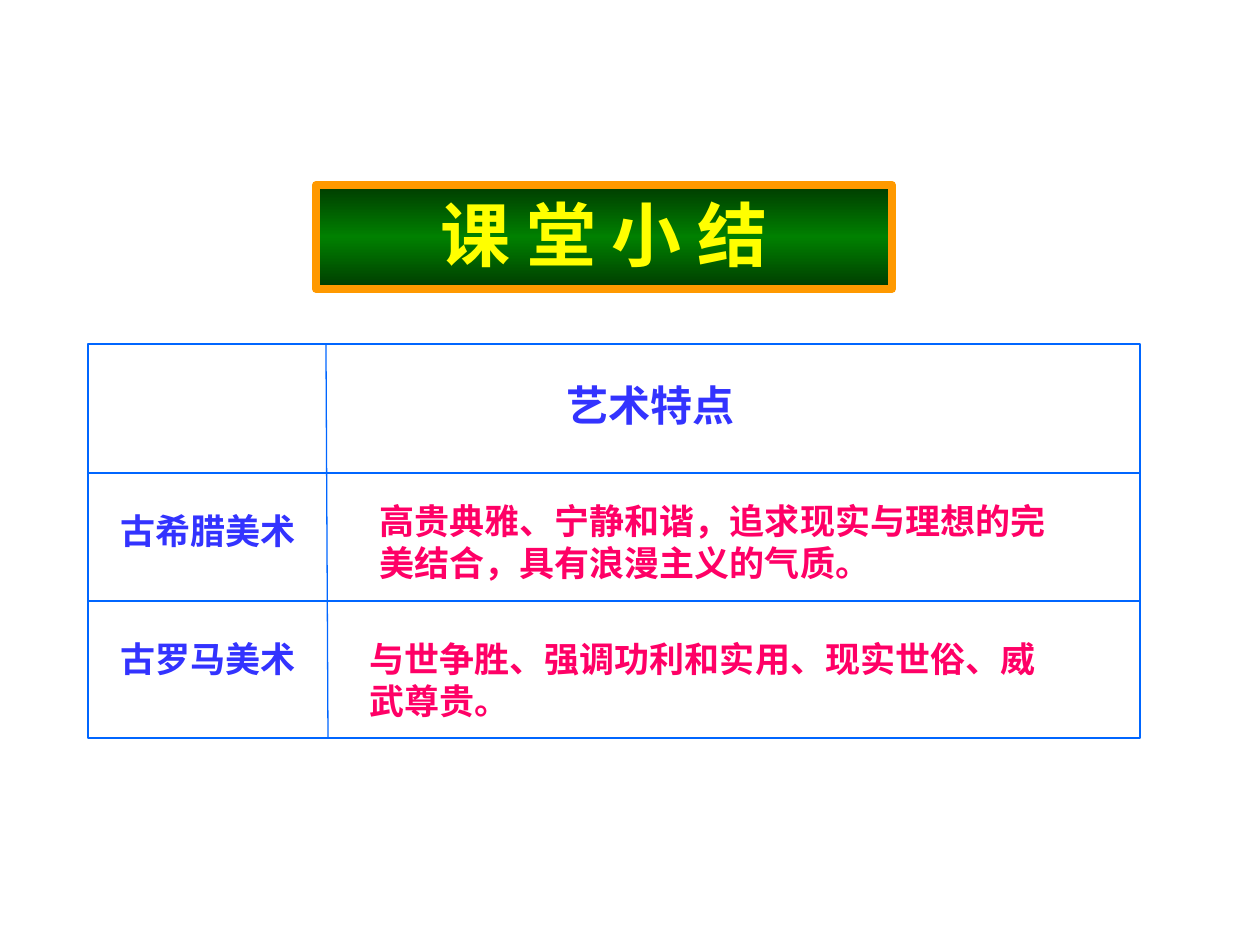
from copy import deepcopy

from lxml import etree
from pptx import Presentation
from pptx.dml.color import RGBColor
from pptx.enum.shapes import MSO_CONNECTOR, MSO_SHAPE
from pptx.enum.text import MSO_ANCHOR, MSO_AUTO_SIZE, PP_ALIGN
from pptx.oxml.ns import qn
from pptx.util import Pt

SCALE = 914400 / 126
STRAIGHT = MSO_CONNECTOR.STRAIGHT
RECT = MSO_SHAPE.RECTANGLE
TOP = MSO_ANCHOR.TOP
FIXED = MSO_AUTO_SIZE.NONE
CENTER = PP_ALIGN.CENTER

DARK = RGBColor(0x00, 0x3B, 0x00)
GREEN = RGBColor(0x00, 0x80, 0x00)
ORANGE = RGBColor(0xFF, 0x99, 0x00)
YELLOW = RGBColor(0xFF, 0xFF, 0x00)
BLUE = RGBColor(0x00, 0x66, 0xFF)
INDIGO = RGBColor(0x33, 0x33, 0xFF)
PINK = RGBColor(0xFF, 0x00, 0x66)

LEFT, RIGHT, HEAD, FOOT = 88, 1140, 344, 738
RULES = (473, 601, FOOT)
LABELS = (
    ("古希腊美术", 108, 503, 238, 54, 20, INDIGO),
    ("古罗马美术", 108, 631, 208, 54, 20, INDIGO),
    ("艺术特点", 554, 373, 258, 63, 24, INDIGO),
    ("高贵典雅、宁静和谐，追求现实与理想的完美结合，具有浪漫主义的气质。",
     367, 493, 725, 97, 20, PINK),
    ("与世争胜、强调功利和实用、现实世俗、威武尊贵。",
     357, 631, 714, 97, 20, PINK),
)


def emu(*sizes):
    return [round(size * SCALE) for size in sizes]


class Painter:
    font = "Arial"
    thin = Pt(0.75)

    def __init__(self, slide):
        self.slide = slide

    def style(self, shape, text, size, color, font):
        frame = shape.text_frame
        frame.text = text
        frame.word_wrap = True
        frame.auto_size = FIXED
        frame.vertical_anchor = TOP
        for run in frame.paragraphs[0].runs:
            run.font.name = font
            run.font.size = Pt(size)
            run.font.bold = True
            run.font.color.rgb = color

    def title(self, text, left, top, width, height):
        shape = self.slide.shapes.title
        shape.left, shape.top, shape.width, shape.height = emu(
            left, top, width, height)
        shape.fill.gradient()
        shape.fill.gradient_angle = 90
        stops = shape.fill.gradient_stops
        for stop, color, place in zip(stops, (DARK, GREEN), (0, 0.5)):
            stop.color.rgb = color
            stop.position = place
        group = next(shape.element.iter(qn("a:gsLst")))
        group.append(deepcopy(group[0]))
        group[-1].set("pos", "100000")
        shape.line.color.rgb = ORANGE
        shape.line.width = Pt(4.5)
        self.style(shape, text, 40, YELLOW, "Times New Roman")
        shape.text_frame.paragraphs[0].alignment = CENTER

    def frame(self, left, top, width, height):
        shape = self.slide.shapes.add_shape(
            RECT, *emu(left, top, width, height))
        shape.shadow.inherit = False
        shape.fill.background()
        shape.line.color.rgb = BLUE
        shape.line.width = self.thin

    def rule(self, *ends):
        line = self.slide.shapes.add_connector(STRAIGHT, *emu(*ends))
        line.line.color.rgb = BLUE
        line.line.width = self.thin
        etree.SubElement(line.element.spPr, qn("a:effectLst"))

    def label(self, text, left, top, width, height, size, color):
        box = self.slide.shapes.add_textbox(*emu(left, top, width, height))
        self.style(box, text, size, color, self.font)


def main():
    deck = Presentation()
    deck.slide_width, deck.slide_height = emu(1260, 945)
    pen = Painter(deck.slides.add_slide(deck.slide_layouts[5]))
    pen.title("课 堂 小 结", 316, 185, 576, 104)
    pen.frame(LEFT, HEAD, RIGHT - LEFT, FOOT - HEAD)
    for level in RULES:
        pen.rule(LEFT, level, RIGHT, level)
    pen.rule(326, HEAD, 328, FOOT)
    for label in LABELS:
        pen.label(*label)
    deck.save("out.pptx")


if __name__ == "__main__":
    main()
